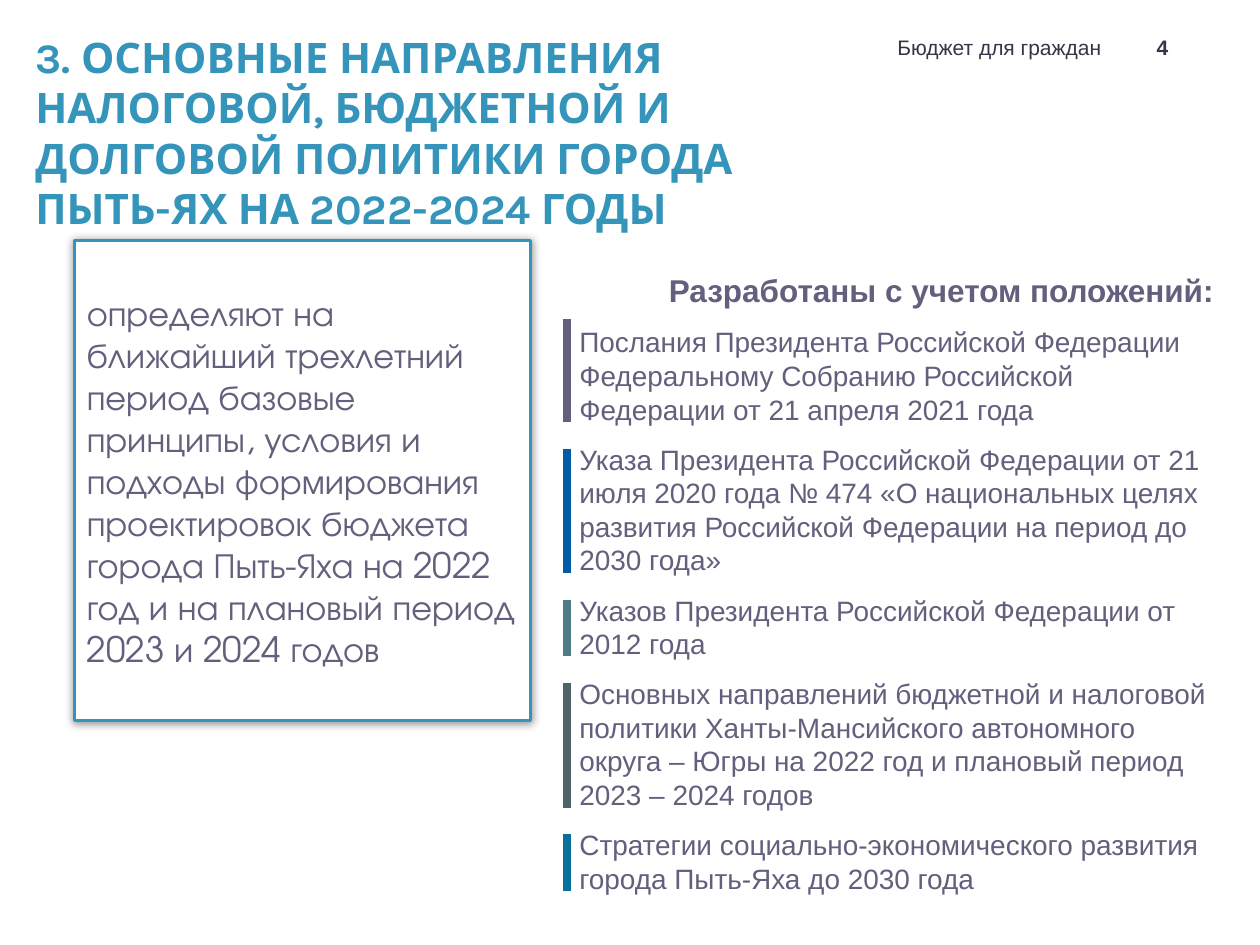
"""Build the slide on the city's tax, budget and debt policy directions."""
from lxml.etree import SubElement
from pptx import Presentation
from pptx.dml.color import RGBColor
from pptx.enum.shapes import MSO_CONNECTOR, MSO_SHAPE
from pptx.enum.text import MSO_ANCHOR as Anchor, MSO_AUTO_SIZE, PP_ALIGN as Align
from pptx.oxml.ns import qn
from pptx.util import Inches, Pt

TEAL = RGBColor(0x34, 0x94, 0xBA)
DARK = RGBColor(0x37, 0x35, 0x45)
VIOLET = RGBColor(0x63, 0x5F, 0x7C)
BLUE = RGBColor(0x02, 0x5C, 0xA5)
SEA = RGBColor(0x4F, 0x7B, 0x86)
SLATE = RGBColor(0x4F, 0x62, 0x65)
OCEAN = RGBColor(0x09, 0x70, 0x9A)
WHITE = RGBColor(0xFF, 0xFF, 0xFF)

TITLE = ("3. ОСНОВНЫЕ НАПРАВЛЕНИЯ НАЛОГОВОЙ, БЮДЖЕТНОЙ И ДОЛГОВОЙ ПОЛИТИКИ "
         "ГОРОДА ПЫТЬ-ЯХ НА 2022-2024 ГОДЫ")
HEADER = "Бюджет для граждан"
PAGE = "4"
PURPOSE = ("определяют на ближайший трехлетний период базовые принципы, условия и подходы "
           "формирования проектировок бюджета города Пыть-Яха на 2022 год "
           "и на плановый период 2023 и 2024 годов")
BASIS_HEADING = "Разработаны с учетом положений:"
BASIS = [
    ("Послания Президента Российской Федерации Федеральному Собранию Российской "
     "Федерации от 21 апреля 2021 года", 3, VIOLET, 0),
    ("Указа Президента Российской Федерации от 21 июля 2020 года № 474 «О национальных "
     "целях развития Российской Федерации на период до 2030 года»", 4, BLUE, 0.1),
    ("Указов Президента Российской Федерации от 2012 года", 2, SEA, 0.1),
    ("Основных направлений бюджетной и налоговой политики Ханты-Мансийского автономного "
     "округа – Югры на 2022 год и плановый период 2023 – 2024 годов", 4, SLATE, 0.1),
    ("Стратегии социально-экономического развития города Пыть-Яха до 2030 года",
     2, OCEAN, 0.1),
]
BASIS_LEFT, BASIS_TOP, BASIS_WIDTH = 4.5, 2.53, 5.28
LINE_HEIGHT, PADDING, GAP, BAR_END = 0.27, 0.1, 0.02, 0.09


def write(shape, text, size, color, font="Arial", bold=False, align=Align.LEFT,
          anchor=Anchor.TOP, wrap=True):
    frame = shape.text_frame
    frame.word_wrap = wrap
    frame.auto_size = MSO_AUTO_SIZE.NONE
    frame.vertical_anchor = anchor
    paragraph = frame.paragraphs[0]
    paragraph.alignment = align
    run = paragraph.add_run()
    run.text = text
    run.font.name = font
    run.font.size = Pt(size)
    run.font.bold = bold
    run.font.color.rgb = color


def add_text(slide, box, text, size, color, **style):
    shape = slide.shapes.add_textbox(*map(Inches, box))
    write(shape, text, size, color, **style)


def add_title(slide):
    title = slide.shapes.title
    title.left, title.top, title.width, title.height = map(Inches, (0.28, 0.2, 5.58, 1.7))
    title.text_frame.margin_left = title.text_frame.margin_right = 0
    write(title, TITLE, 24, TEAL, font="Karla", bold=True)


def add_purpose(slide):
    panel = slide.shapes.add_shape(MSO_SHAPE.RECTANGLE, *map(Inches, (0.59, 1.91, 3.62, 3.81)))
    panel.fill.solid()
    panel.fill.fore_color.rgb = WHITE
    panel.line.color.rgb = TEAL
    panel.line.width = Pt(2)
    panel.shadow.inherit = False
    effects = panel.element.spPr.find(qn("a:effectLst"))
    glow = SubElement(effects, qn("a:outerShdw"), blurRad=str(Pt(5)), dist="0", dir="0",
                      algn="ctr", rotWithShape="0")
    black = SubElement(glow, qn("a:srgbClr"), val="000000")
    SubElement(black, qn("a:alpha"), val="40000")
    write(panel, PURPOSE, 20, VIOLET, font="TeX Gyre Adventor", anchor=Anchor.MIDDLE)


def add_bar(slide, top, bottom, color):
    bar = slide.shapes.add_connector(MSO_CONNECTOR.STRAIGHT, Inches(BASIS_LEFT), Inches(top),
                                     Inches(BASIS_LEFT), Inches(bottom))
    bar.line.color.rgb = color
    bar.line.width = Pt(4.5)
    SubElement(bar.element.spPr, qn("a:effectLst"))


def add_basis(slide):
    add_text(slide, (5.21, 2.1, 4.57, 0.4), BASIS_HEADING, 18, VIOLET, bold=True, wrap=False)
    top = BASIS_TOP
    for text, lines, color, bar_start in BASIS:
        height = lines * LINE_HEIGHT + PADDING
        add_text(slide, (BASIS_LEFT, top, BASIS_WIDTH, height), text, 16, VIOLET)
        add_bar(slide, top + bar_start, top + height - BAR_END, color)
        top += height + GAP


def main():
    presentation = Presentation()
    presentation.slide_width, presentation.slide_height = Inches(10), Inches(7.5)
    slide = presentation.slides.add_slide(presentation.slide_layouts[5])
    add_title(slide)
    add_text(slide, (6.42, 0.19, 2.42, 0.33), HEADER, 12, DARK,
             align=Align.RIGHT, anchor=Anchor.BOTTOM)
    add_text(slide, (8.95, 0.19, 0.55, 0.33), PAGE, 12, DARK, bold=True,
             align=Align.CENTER, anchor=Anchor.BOTTOM)
    add_purpose(slide)
    add_basis(slide)
    presentation.save("out.pptx")


if __name__ == "__main__":
    main()
